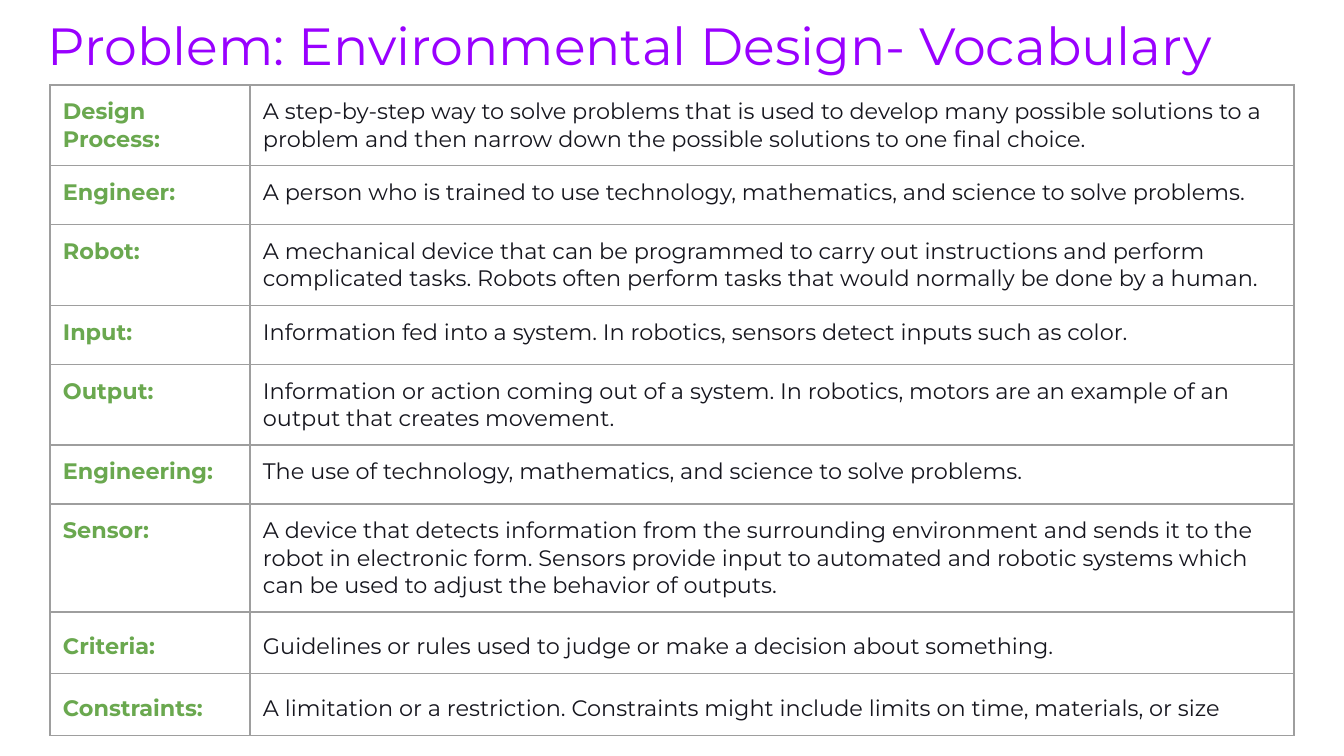
from lxml.etree import SubElement as Sub
from pptx import Presentation
from pptx.dml.color import RGBColor as Rgb
from pptx.enum.text import MSO_ANCHOR as Anchor, MSO_AUTO_SIZE as Fit, PP_ALIGN as Align
from pptx.oxml.ns import qn
from pptx.util import Pt

SCALE = 914400 / 134.4
HUES = {"title": "9900FF", "term": "6AA84F", "body": "16161E", "line": "9E9E9E"}
PAD = 13
SIDES = ("left", "top", "right", "bottom")
LOOSE = 1.3
WORDS = [
    ("Design Process:", "A step-by-step way to solve problems that is used to develop many possible "
     "solutions to a problem and then narrow down the possible solutions to one final choice.", 1),
    ("Engineer:", "A person who is trained to use technology, mathematics, and science to solve "
     "problems.", 1),
    ("Robot:", "A mechanical device that can be programmed to carry out instructions and perform "
     "complicated tasks. Robots often perform tasks that would normally be done by a human.", 1),
    ("Input:", "Information fed into a system. In robotics, sensors detect inputs such as color.", 1),
    ("Output:", "Information or action coming out of a system. In robotics, motors are an example "
     "of an output that creates movement.", 1),
    ("Engineering:", "The use of technology, mathematics, and science to solve problems.", 1),
    ("Sensor:", "A device that detects information from the surrounding environment and sends it "
     "to the robot in electronic form. Sensors provide input to automated and robotic systems "
     "which can be used to adjust the behavior of outputs.", 1),
    ("Criteria:", "Guidelines or rules used to judge or make a decision about something.", LOOSE),
    ("Constraints:", "A limitation or a restriction. Constraints might include limits on time, "
     "materials, or size", LOOSE),
]


def px(num):
    return round(num * SCALE)


def assign(item, vals):
    for name, val in vals.items():
        setattr(item, name, val)


class Deck:
    """Holds the style and the current slide, and adds each kind of element."""

    def __init__(self, wide, high):
        self.font = "Montserrat"
        self.pads = {f"margin_{side}": px(PAD) for side in SIDES}
        self.pres = Presentation()
        assign(self.pres, {"slide_width": px(wide), "slide_height": px(high)})
        self.slide = self.pres.slides.add_slide(self.pres.slide_layouts[5])

    def label(self, frame, text, size, hue, bold=False, gap=1):
        para = frame.paragraphs[0]
        assign(para, {"alignment": Align.LEFT, "line_spacing": gap})
        run = para.add_run()
        run.text = text
        assign(run.font, {"name": self.font, "size": Pt(size), "bold": bold})
        run.font.color.rgb = Rgb.from_string(HUES[hue])

    def title(self, text, left, top, wide, high):
        shape = self.slide.shapes.title
        assign(shape, {"left": px(left), "top": px(top), "width": px(wide), "height": px(high)})
        assign(shape.text_frame, {**self.pads, "vertical_anchor": Anchor.TOP,
                                  "auto_size": Fit.NONE, "word_wrap": True})
        self.label(shape.text_frame, text, 28, "title")

    def border(self, cell):
        props = cell._tc.get_or_add_tcPr()
        for side in ("lnL", "lnR", "lnT", "lnB"):
            line = Sub(props, qn(f"a:{side}"), w=str(Pt(0.75)))
            fill = Sub(line, qn("a:solidFill"))
            Sub(fill, qn("a:srgbClr"), val=HUES["line"])

    def cell(self, cell, text, hue, bold, gap):
        assign(cell, {**self.pads, "vertical_anchor": Anchor.TOP})
        self.border(cell)
        cell.fill.background()
        self.label(cell.text_frame, text, 12, hue, bold, gap)

    def table(self, rows, left, top, cols, high):
        frame = self.slide.shapes.add_table(len(rows), len(cols), px(left), px(top),
                                            px(sum(cols)), px(high * len(rows)))
        grid = frame.table
        assign(grid, {"first_row": False, "horz_banding": False})
        for col, wide in zip(grid.columns, cols):
            col.width = px(wide)
        for row, (term, text, gap) in zip(grid.rows, rows):
            row.height = px(high)
            self.cell(row.cells[0], term, "term", True, gap)
            self.cell(row.cells[1], text, "body", False, gap)


def main():
    deck = Deck(1344, 756)
    deck.title("Problem: Environmental Design- Vocabulary", 35, 0, 1236, 85)
    deck.table(WORDS, 50, 85, (200, 1044), 59)
    deck.pres.save("out.pptx")


if __name__ == "__main__":
    main()
